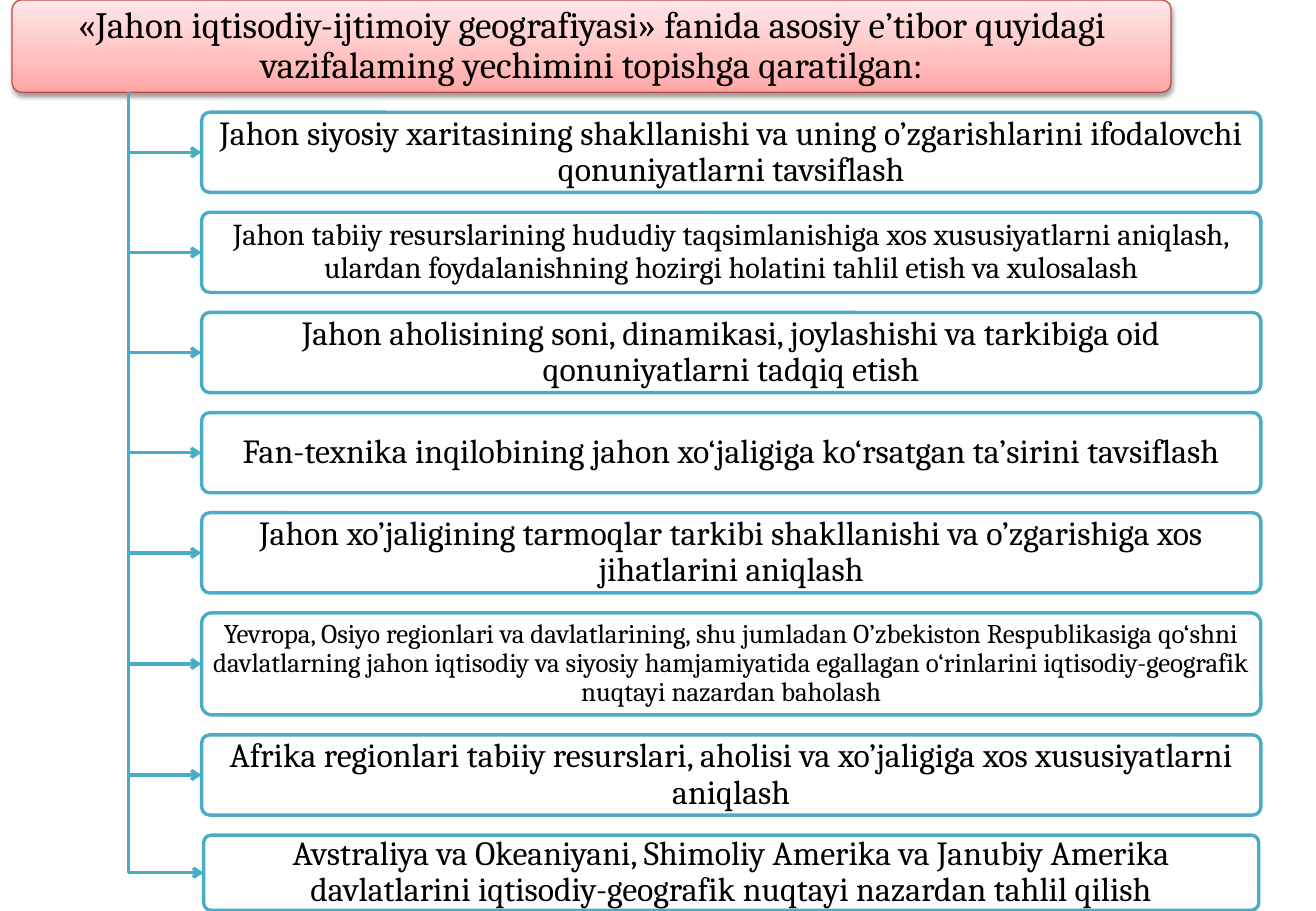
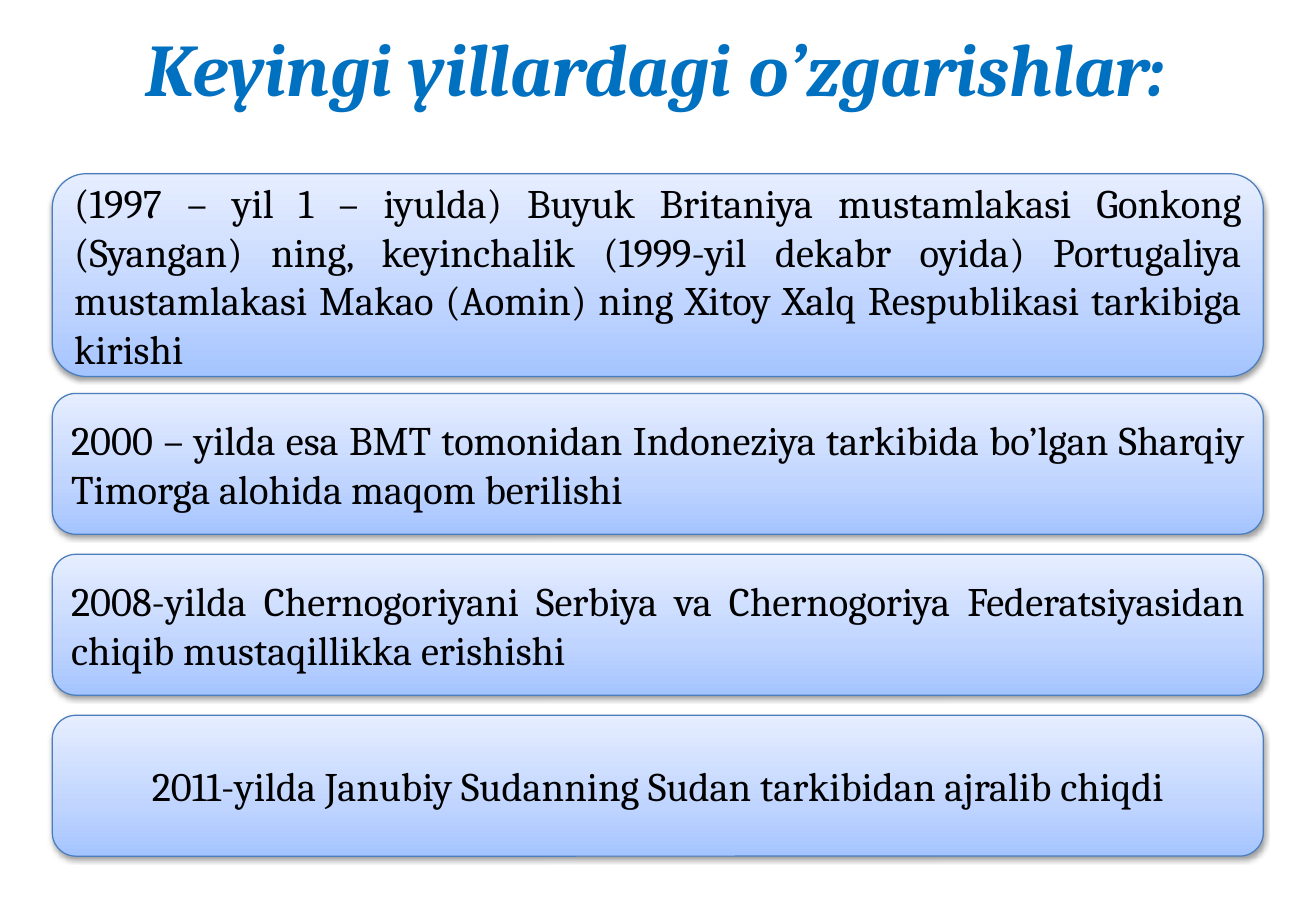
"""Build two slides on the tasks of world geography and recent political changes."""
from dataclasses import dataclass
from typing import Any

from lxml import etree
from pptx import Presentation
from pptx.dml.color import RGBColor
from pptx.enum.shapes import MSO_SHAPE
from pptx.enum.text import MSO_ANCHOR, PP_ALIGN
from pptx.oxml.ns import qn
from pptx.util import Pt

ROUNDED = MSO_SHAPE.ROUNDED_RECTANGLE
MIDDLE = MSO_ANCHOR.MIDDLE
CENTER = PP_ALIGN.CENTER
JUSTIFY = PP_ALIGN.JUSTIFY


@dataclass(frozen=True)
class Theme:
    font: str = "Cambria"
    text: str = "000000"
    title: str = "0070C0"
    paper: str = "FFFFFF"
    branch: str = "4BACC6"
    red_edge: str = "BF4C48"
    red_stops: tuple = ((0, "FFA6A5"), (35, "FFC0BF"), (100, "FFE7E7"))
    blue_edge: str = "4B7EBC"
    blue_stops: tuple = ((0, "A4C4FF"), (35, "BFD4FF"), (100, "E6EEFF"))
    title_size: int = 44
    event_size: int = 24
    heading_size: int = 22
    task_size: int = 20
    medium_size: int = 18
    small_size: int = 16
    branch_line: float = 2
    edge_line: float = 0.75


def add_node(parent, tag, **attributes):
    return etree.SubElement(parent, qn(tag), attributes)


@dataclass
class Deck:
    theme: Theme
    presentation: Any
    page: Any = None

    def add_page(self):
        layout = self.presentation.slide_layouts[6]
        self.page = self.presentation.slides.add_slide(layout)

    def set_text(self, frame, text, size, color, align=CENTER, spacing=None):
        frame.text = text
        frame.word_wrap = True
        para = frame.paragraphs[0]
        para.alignment = align
        para.line_spacing = spacing
        font = para.runs[0].font
        font.name, font.size = self.theme.font, Pt(size)
        font.color.rgb = RGBColor.from_string(color)
        return font

    def title(self, text, left, top, width, height):
        box = self.page.shapes.add_textbox(Pt(left), Pt(top), Pt(width), Pt(height))
        font = self.set_text(
            box.text_frame, text, self.theme.title_size, self.theme.title)
        font.bold = font.italic = True

    def outline(self, shape, color, weight):
        shape.shadow.inherit = False
        shape.line.color.rgb = RGBColor.from_string(color)
        shape.line.width = Pt(weight)

    def box(self, left, top, width, height, edge, weight):
        shape = self.page.shapes.add_shape(
            ROUNDED, Pt(left), Pt(top), Pt(width), Pt(height))
        self.outline(shape, edge, weight)
        shape.text_frame.vertical_anchor = MIDDLE
        return shape

    def glossy_box(self, left, top, width, height, edge, stops):
        shape = self.box(left, top, width, height, edge, self.theme.edge_line)
        shape.fill.gradient()
        shape.fill.gradient_angle = 90
        properties = shape._element.spPr
        stop_list = properties.find(qn("a:gradFill")).find(qn("a:gsLst"))
        stop_list.clear()
        for position, color in stops:
            stop = add_node(stop_list, "a:gs", pos=str(position * 1000))
            add_node(stop, "a:srgbClr", val=color)
        shadow = add_node(
            properties.find(qn("a:effectLst")), "a:outerShdw", blurRad=str(Pt(3.1)),
            dist=str(Pt(1.6)), dir="5400000", rotWithShape="0")
        shade = add_node(shadow, "a:srgbClr", val=self.theme.text)
        add_node(shade, "a:alpha", val="38000")
        return shape

    def fitted_text(self, shape, text, size):
        shape.adjustments[0] = 0.1
        frame = shape.text_frame
        frame.margin_left = frame.margin_right = Pt(size * 0.15)
        frame.margin_top = frame.margin_bottom = Pt(size * 0.1)
        self.set_text(frame, text, size, self.theme.text, spacing=0.9)

    def heading(self, text, left, top, width, height):
        shape = self.glossy_box(
            left, top, width, height, self.theme.red_edge, self.theme.red_stops)
        self.fitted_text(shape, text, self.theme.heading_size)

    def task(self, text, size, left, top, width, height):
        shape = self.box(
            left, top, width, height, self.theme.branch, self.theme.branch_line)
        shape.fill.solid()
        shape.fill.fore_color.rgb = RGBColor.from_string(self.theme.paper)
        self.fitted_text(shape, text, size)

    def branch(self, left, top, right, bottom):
        builder = self.page.shapes.build_freeform(Pt(left), Pt(top))
        builder.add_line_segments(
            [(Pt(left), Pt(bottom)), (Pt(right), Pt(bottom))], close=False)
        shape = builder.convert_to_shape()
        shape.fill.background()
        self.outline(shape, self.theme.branch, self.theme.branch_line)
        add_node(shape._element.spPr.find(qn("a:ln")), "a:tailEnd", type="arrow")

    def event(self, text, align, left, top, width, height):
        shape = self.glossy_box(
            left, top, width, height, self.theme.blue_edge, self.theme.blue_stops)
        self.set_text(
            shape.text_frame, text, self.theme.event_size, self.theme.text, align)


def build_tasks(deck):
    theme = deck.theme
    left, width, height, gap = 119.5, 627.8, 47.5, 11.85
    trunk, heading_bottom = 76.3, 54.7
    tasks = [
        ("Jahon siyosiy xaritasining shakllanishi va uning o’zgarishlarini "
         "ifodalovchi qonuniyatlarni tavsiflash", theme.task_size, height, 0),
        ("Jahon tabiiy resurslarining hududiy taqsimlanishiga xos xususiyatlarni "
         "aniqlash, ulardan foydalanishning hozirgi holatini tahlil etish va "
         "xulosalash", theme.medium_size, height, 0),
        ("Jahon aholisining soni, dinamikasi, joylashishi va tarkibiga oid "
         "qonuniyatlarni tadqiq etish", theme.task_size, height, 0),
        ("Fan-texnika inqilobining jahon xo‘jaligiga ko‘rsatgan ta’sirini "
         "tavsiflash", theme.task_size, height, 0),
        ("Jahon xo’jaligining tarmoqlar tarkibi shakllanishi va o’zgarishiga xos "
         "jihatlarini aniqlash", theme.task_size, height, 0),
        ("Yevropa, Osiyo regionlari va davlatlarining, shu jumladan O’zbekiston "
         "Respublikasiga qo‘shni davlatlarning jahon iqtisodiy va siyosiy "
         "hamjamiyatida egallagan o‘rinlarini iqtisodiy-geografik nuqtayi nazardan "
         "baholash", theme.small_size, 60.5, 0),
        ("Afrika regionlari tabiiy resurslari, aholisi va xo’jaligiga xos "
         "xususiyatlarni aniqlash", theme.task_size, height, 0),
        ("Avstraliya va Okeaniyani, Shimoliy Amerika va Janubiy Amerika "
         "davlatlarini iqtisodiy-geografik nuqtayi nazardan tahlil qilish",
         theme.task_size, 44.6, 1.2),
    ]
    deck.add_page()
    deck.heading(
        "«Jahon iqtisodiy-ijtimoiy geografiyasi» fanida asosiy e’tibor quyidagi "
        "vazifalaming yechimini topishga qaratilgan:", 7.2, 0, 686.9, heading_bottom)
    top = heading_bottom + gap
    for text, size, task_height, inset in tasks:
        deck.branch(trunk, heading_bottom, left + inset, top + task_height / 2)
        deck.task(text, size, left + inset, top, width - 2 * inset, task_height)
        top += task_height + gap


def build_changes(deck):
    left, width, height, first_top, pitch = 31, 717.8, 83.5, 233.2, 95.4
    events = [
        ("2000 – yilda esa BMT tomonidan Indoneziya tarkibida bo’lgan Sharqiy "
         "Timorga alohida maqom berilishi", JUSTIFY),
        ("2008-yilda Chernogoriyani Serbiya va Chernogoriya Federatsiyasidan "
         "chiqib mustaqillikka erishishi", JUSTIFY),
        ("2011-yilda Janubiy Sudanning Sudan tarkibidan ajralib chiqdi", CENTER),
    ]
    deck.add_page()
    deck.title("Keyingi yillardagi o’zgarishlar:", 11.5, 9.4, 753.8, 60.5)
    deck.event(
        "(1997 – yil 1 – iyulda) Buyuk Britaniya mustamlakasi Gonkong (Syangan) "
        "ning, keyinchalik (1999-yil dekabr oyida) Portugaliya mustamlakasi Makao "
        "(Aomin) ning Xitoy Xalq Respublikasi tarkibiga kirishi",
        JUSTIFY, left, 103, width, 120.2)
    for row, (text, align) in enumerate(events):
        deck.event(text, align, left, first_top + row * pitch, width, height)


def main():
    deck = Deck(Theme(), Presentation())
    deck.presentation.slide_width = Pt(780)
    deck.presentation.slide_height = Pt(540)
    build_tasks(deck)
    build_changes(deck)
    deck.presentation.save("out.pptx")


if __name__ == "__main__":
    main()
